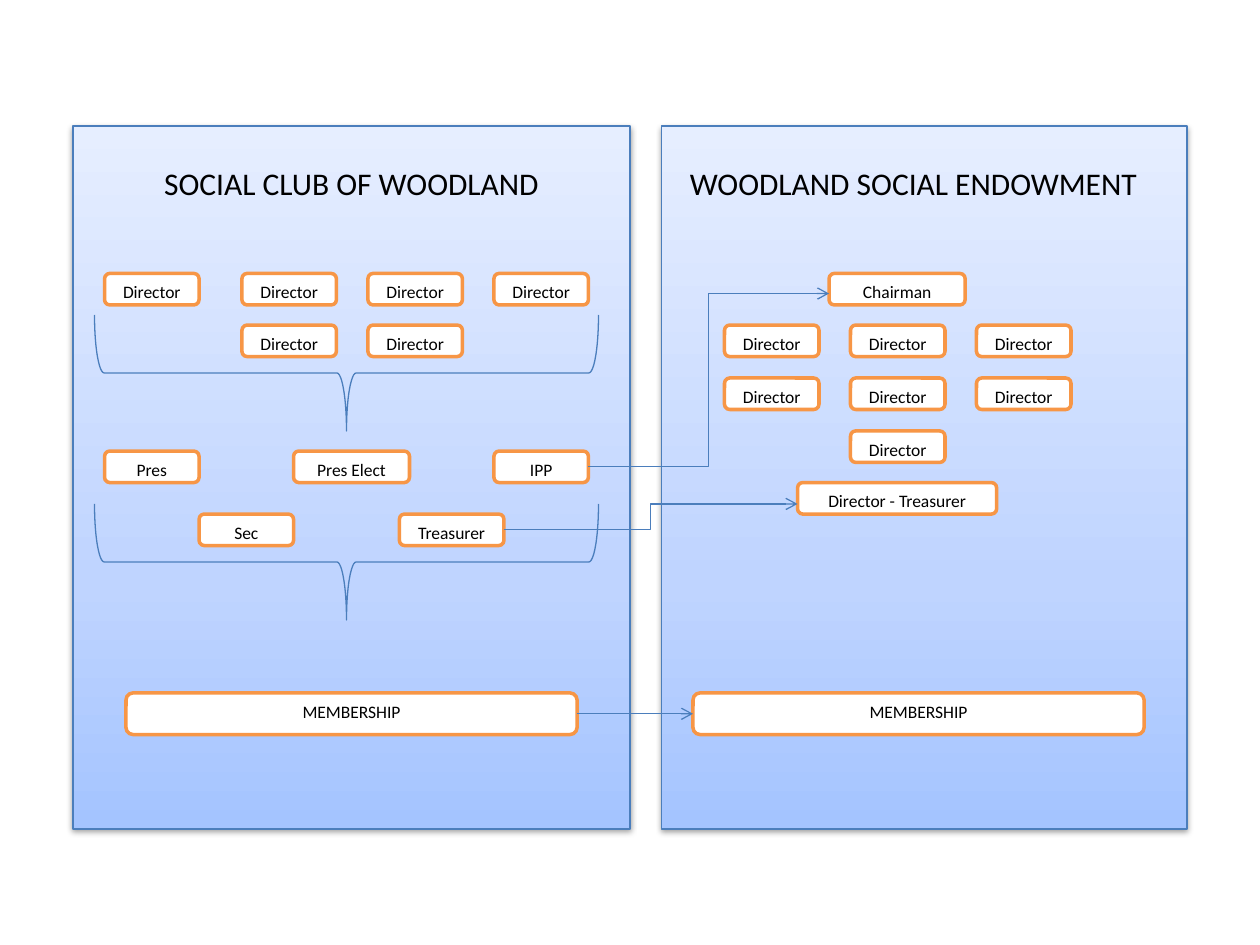
import pptx
import pptx.util
import pptx.dml.color
import pptx.enum.shapes
import pptx.enum.text
import pptx.oxml
import pptx.oxml.ns
from pptx.util import Inches

COLORS = {
    "line": "4B7EBC",
    "border": "F79646",
    "box": "FFFFFF",
    "text": "000000",
    "panel_bottom": "A4C4FF",
    "panel_middle": "BFD4FF",
    "panel_top": "E6EEFF",
}
FONT = "Calibri"
BOX_WIDTH, BOX_HEIGHT = 0.75, 0.25
SHAPES = pptx.enum.shapes.MSO_SHAPE
CONNECTORS = pptx.enum.shapes.MSO_CONNECTOR
LEFT_SIDE, RIGHT_SIDE = 1, 3


def rgb(name):
    return pptx.dml.color.RGBColor.from_string(COLORS[name])


def drawing_element(tag, attributes="", content=""):
    namespace = pptx.oxml.ns.nsdecls("a")
    return pptx.oxml.parse_xml(f"<a:{tag} {namespace} {attributes}>{content}</a:{tag}>")


def set_line(shape, color, width):
    shape.line.color.rgb = rgb(color)
    shape.line.width = pptx.util.Pt(width)


def add_shape(slide, kind, left, top, width, height, line="line", line_width=0.75):
    shape = slide.shapes.add_shape(
        kind, Inches(left), Inches(top), Inches(width), Inches(height))
    set_line(shape, line, line_width)
    shape.shadow.inherit = False
    return shape


def write_text(shape, text, size):
    paragraph = shape.text_frame.paragraphs[0]
    paragraph.text = text
    paragraph.alignment = pptx.enum.text.PP_ALIGN.CENTER
    paragraph.font.size = pptx.util.Pt(size)
    paragraph.font.name = FONT
    paragraph.font.color.rgb = rgb("text")


def add_panel(slide, left, width):
    panel = add_shape(slide, SHAPES.FLOWCHART_PROCESS, left, 1, width, 5.58)
    properties = panel._element.spPr
    # Three-stop gradient, running upwards
    stops = "".join(
        f'<a:gs pos="{position * 1000}"><a:srgbClr val="{COLORS[name]}"/></a:gs>'
        for position, name in ((0, "panel_bottom"), (35, "panel_middle"), (100, "panel_top")))
    properties.find(pptx.oxml.ns.qn("a:ln")).addprevious(drawing_element(
        "gradFill", 'rotWithShape="1"',
        f'<a:gsLst>{stops}</a:gsLst><a:lin ang="16200000" scaled="0"/>'))
    # Soft shadow below
    properties.find(pptx.oxml.ns.qn("a:effectLst")).append(drawing_element(
        "outerShdw", 'blurRad="40000" dist="20000" dir="5400000" rotWithShape="0"',
        '<a:srgbClr val="000000"><a:alpha val="38000"/></a:srgbClr>'))


def add_heading(slide, text, left, width):
    heading = slide.shapes.add_textbox(
        Inches(left), Inches(1.25), Inches(width), Inches(0.4))
    heading.text_frame.word_wrap = True
    heading.text_frame.auto_size = pptx.enum.text.MSO_AUTO_SIZE.SHAPE_TO_FIT_TEXT
    write_text(heading, text, 18)


def add_box(slide, text, left, top, width=BOX_WIDTH, height=BOX_HEIGHT):
    box = add_shape(slide, SHAPES.ROUNDED_RECTANGLE, left, top, width, height, "border", 2)
    box.fill.solid()
    box.fill.fore_color.rgb = rgb("box")
    box.text_frame.vertical_anchor = pptx.enum.text.MSO_ANCHOR.TOP
    write_text(box, text, 10)
    return box


def add_directors(slide, positions):
    for left, top in positions:
        add_box(slide, "Director", left, top)


def add_brace(slide, top):
    brace = add_shape(slide, SHAPES.RIGHT_BRACE, 2.29, top, 0.92, 4)
    brace.rotation = 90
    brace.fill.background()


def add_arrow(slide, kind, source, end_x, end_y):
    """Draw an arrow from the right side of a box to a point."""
    arrow = slide.shapes.add_connector(kind, 0, 0, Inches(end_x), Inches(end_y))
    arrow.begin_connect(source, RIGHT_SIDE)
    set_line(arrow, "line", 0.75)
    arrow.line._get_or_add_ln().append(drawing_element("tailEnd", 'type="arrow"'))
    arrow._element.spPr.append(drawing_element("effectLst"))
    return arrow


def main():
    presentation = pptx.Presentation()
    presentation.slide_width = Inches(10)
    presentation.slide_height = Inches(7.5)
    slide = presentation.slides.add_slide(presentation.slide_layouts[6])

    # Panels and headings
    add_panel(slide, 0.58, 4.42)
    add_panel(slide, 5.25, 4.17)
    add_heading(slide, "SOCIAL CLUB OF WOODLAND", 0.75, 4.08)
    add_heading(slide, "WOODLAND SOCIAL ENDOWMENT", 5.25, 4)

    # Club: directors, officers and members
    add_directors(slide, [(left, 2.17) for left in (0.83, 1.92, 2.92, 3.92)])
    add_directors(slide, [(left, 2.58) for left in (1.92, 2.92)])
    add_brace(slide, 0.96)
    add_box(slide, "Pres", 0.83, 3.58)
    add_box(slide, "Pres Elect", 2.33, 3.58, 0.92)
    past_president = add_box(slide, "IPP", 3.92, 3.58)
    add_box(slide, "Sec", 1.58, 4.08)
    treasurer = add_box(slide, "Treasurer", 3.17, 4.08, 0.83)
    add_brace(slide, 2.46)
    club_members = add_box(slide, "MEMBERSHIP", 1, 5.5, 3.58, 0.33)

    # Endowment: chairman, directors and members
    add_box(slide, "Chairman", 6.58, 2.17, 1.08)
    add_directors(slide, [(left, top) for top in (2.58, 3) for left in (5.75, 6.75, 7.75)])
    add_directors(slide, [(6.75, 3.42)])
    add_box(slide, "Director - Treasurer", 6.33, 3.83, 1.58)
    endowment_members = add_box(slide, "MEMBERSHIP", 5.5, 5.5, 3.58, 0.33)

    # Arrows from the club to the endowment
    add_arrow(slide, CONNECTORS.ELBOW, past_president, 6.58, 2.33)
    add_arrow(slide, CONNECTORS.ELBOW, treasurer, 6.33, 4)
    members_arrow = add_arrow(slide, CONNECTORS.STRAIGHT, club_members, 5.5, 5.67)
    members_arrow.end_connect(endowment_members, LEFT_SIDE)

    presentation.save("out.pptx")


if __name__ == "__main__":
    main()
